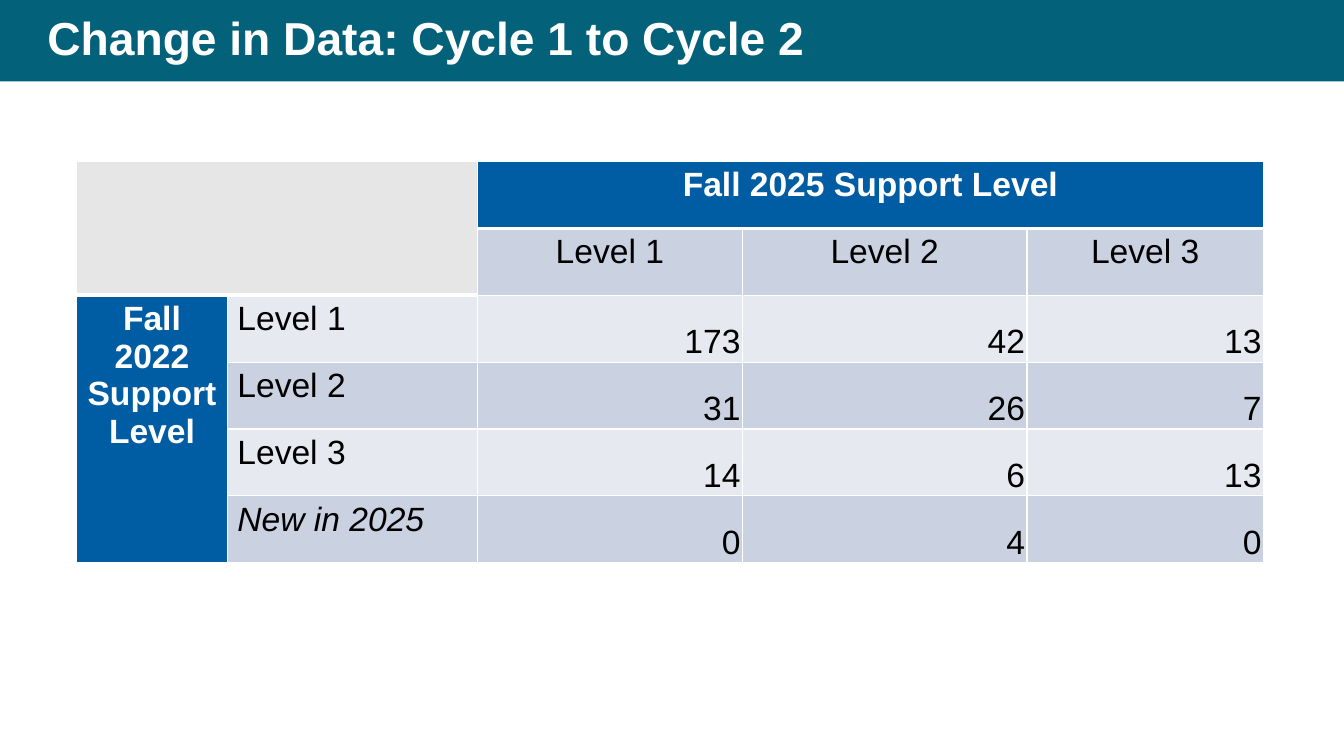
from lxml.etree import SubElement
from pptx import Presentation
from pptx.dml.color import RGBColor
from pptx.enum.shapes import MSO_SHAPE
from pptx.enum.text import MSO_ANCHOR, MSO_AUTO_SIZE, PP_ALIGN
from pptx.oxml.ns import qn
from pptx.util import Cm, Pt

TITLE = "Change in Data: Cycle 1 to Cycle 2"
COLUMN_GROUP = "Fall 2025 Support Level"
ROW_GROUP = "Fall 2022 Support Level"
COLUMN_LABELS = ["Level 1", "Level 2", "Level 3"]
COUNTS = {
    "Level 1": [173, 42, 13],
    "Level 2": [31, 26, 7],
    "Level 3": [14, 6, 13],
    "New in 2025": [0, 4, 0],
}

FONT = "Arial"
TEAL = RGBColor(0x03, 0x61, 0x7A)
BLUE = RGBColor(0x00, 0x5C, 0xA3)
GREY = RGBColor(0xE6, 0xE6, 0xE6)
BAND_DARK = RGBColor(0xCA, 0xD1, 0xE0)
BAND_LIGHT = RGBColor(0xE6, 0xE9, 0xF0)
WHITE = RGBColor(0xFF, 0xFF, 0xFF)
BLACK = RGBColor(0x00, 0x00, 0x00)

SLIDE_WIDTH, SLIDE_HEIGHT = Cm(33.87), Cm(19.05)
BANNER_HEIGHT = Cm(2.05)
TABLE_LEFT, TABLE_TOP = Cm(1.93), Cm(4.07)
COLUMN_WIDTHS = [Cm(3.8), Cm(6.3), Cm(6.68), Cm(7.17), Cm(5.96)]
ROW_HEIGHT = Cm(1.685)
HEADER_ROWS = LABEL_COLUMNS = 2


def format_text(paragraph, size, color, bold=False, italic=False):
    for run in paragraph.runs:
        font = run.font
        font.name, font.size = FONT, Pt(size)
        font.bold, font.italic = bold, italic
        font.color.rgb = color


def set_borders(cell, bottom_width):
    """Draw white borders, 1 pt on all sides but the bottom."""
    properties = cell._tc.get_or_add_tcPr()
    widths = {"a:lnL": 1, "a:lnR": 1, "a:lnT": 1, "a:lnB": bottom_width}
    for tag, width in widths.items():
        line = SubElement(properties, qn(tag), w=str(Pt(width)))
        fill = SubElement(line, qn("a:solidFill"))
        SubElement(fill, qn("a:srgbClr"), val=str(WHITE))


def fill_cell(cell, color, text="", text_color=BLACK, align=PP_ALIGN.LEFT, **style):
    cell.fill.solid()
    cell.fill.fore_color.rgb = color
    cell.text_frame.text = text
    paragraph = cell.text_frame.paragraphs[0]
    paragraph.alignment = align
    format_text(paragraph, 24, text_color, **style)


def fill_count(cell, color, count):
    fill_cell(cell, color, str(count), align=PP_ALIGN.RIGHT)
    cell.vertical_anchor = MSO_ANCHOR.BOTTOM
    cell.margin_left = cell.margin_right = Cm(0.05)
    cell.margin_top = cell.margin_bottom = Cm(0.03)


def add_title(slide):
    title = slide.shapes.title
    banner = slide.shapes.add_shape(MSO_SHAPE.RECTANGLE, 0, 0, SLIDE_WIDTH, BANNER_HEIGHT)
    banner.shadow.inherit = False
    banner.fill.solid()
    banner.fill.fore_color.rgb = TEAL
    banner.line.fill.background()
    title.element.addprevious(banner.element)  # banner goes behind the title

    title.left, title.top = Cm(0.94), 0
    title.width, title.height = Cm(31.3), BANNER_HEIGHT
    frame = title.text_frame
    frame.text = TITLE
    frame.auto_size = MSO_AUTO_SIZE.NONE
    frame.vertical_anchor = MSO_ANCHOR.MIDDLE
    paragraph = frame.paragraphs[0]
    paragraph.alignment = PP_ALIGN.LEFT
    paragraph.line_spacing = 0.9
    format_text(paragraph, 33, WHITE, bold=True)


def add_support_table(slide):
    row_count = HEADER_ROWS + len(COUNTS)
    column_count = len(COLUMN_WIDTHS)
    table = slide.shapes.add_table(
        row_count, column_count, TABLE_LEFT, TABLE_TOP,
        sum(COLUMN_WIDTHS), ROW_HEIGHT * row_count,
    ).table
    for column, width in zip(table.columns, COLUMN_WIDTHS):
        column.width = width
    for row in range(row_count):
        table.rows[row].height = ROW_HEIGHT
        for column in range(column_count):
            in_corner = row < HEADER_ROWS and column < LABEL_COLUMNS
            set_borders(table.cell(row, column), 3 if row == 0 or in_corner else 1)

    corner = table.cell(0, 0)
    column_group = table.cell(0, LABEL_COLUMNS)
    row_group = table.cell(HEADER_ROWS, 0)
    corner.merge(table.cell(HEADER_ROWS - 1, LABEL_COLUMNS - 1))
    column_group.merge(table.cell(0, column_count - 1))
    row_group.merge(table.cell(row_count - 1, 0))

    fill_cell(corner, GREY)
    for cell, text in [(column_group, COLUMN_GROUP), (row_group, ROW_GROUP)]:
        fill_cell(cell, BLUE, text, WHITE, PP_ALIGN.CENTER, bold=True)
    for column, label in enumerate(COLUMN_LABELS, LABEL_COLUMNS):
        fill_cell(table.cell(1, column), BAND_DARK, label, align=PP_ALIGN.CENTER)
    for row, (label, counts) in enumerate(COUNTS.items(), HEADER_ROWS):
        band = BAND_DARK if row % 2 else BAND_LIGHT
        fill_cell(table.cell(row, 1), band, label, italic=label.startswith("New"))
        for column, count in enumerate(counts, LABEL_COLUMNS):
            fill_count(table.cell(row, column), band, count)


def main():
    presentation = Presentation()
    presentation.slide_width, presentation.slide_height = SLIDE_WIDTH, SLIDE_HEIGHT
    slide = presentation.slides.add_slide(presentation.slide_layouts[5])
    add_title(slide)
    add_support_table(slide)
    presentation.save("out.pptx")


if __name__ == "__main__":
    main()
